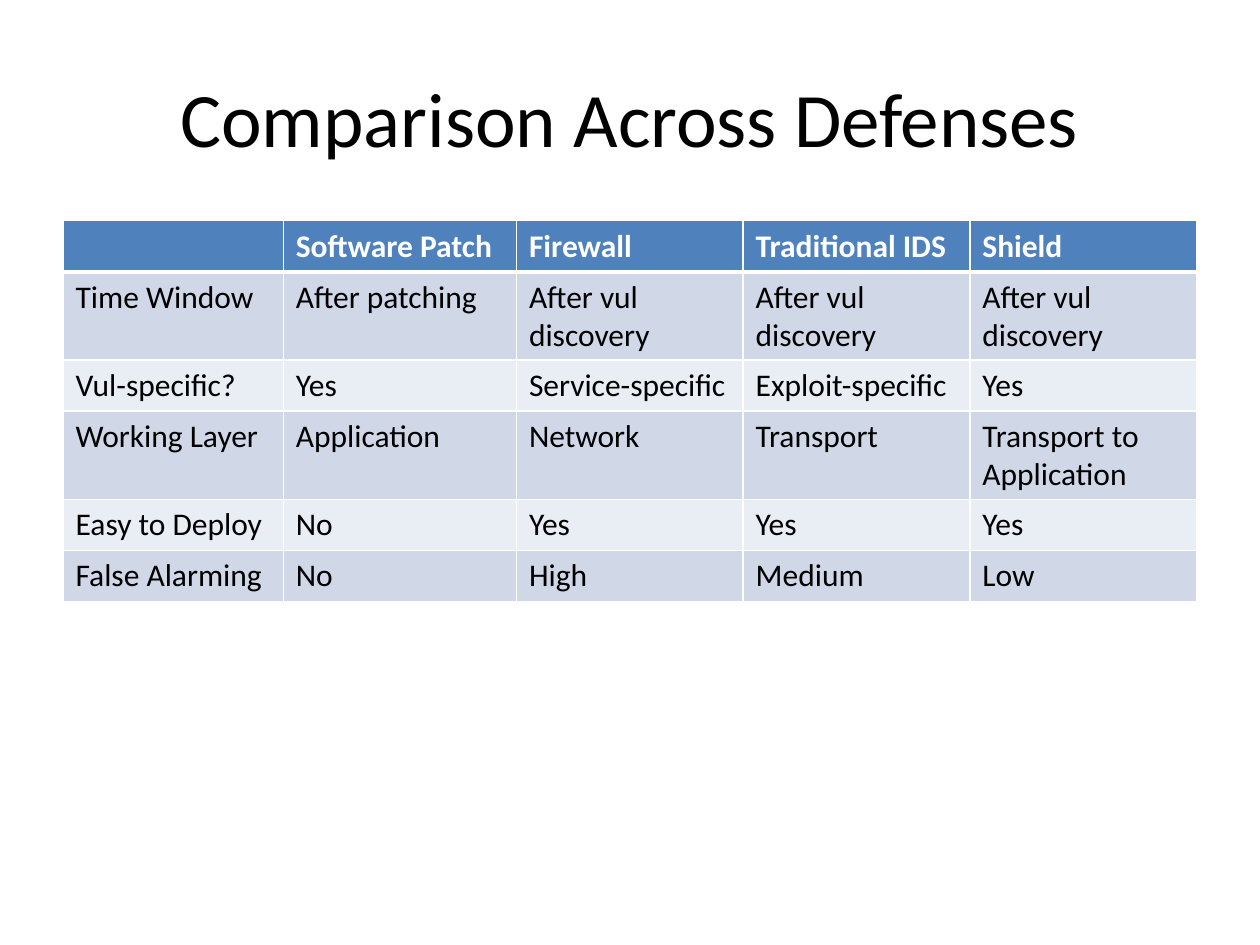
"""Build a slide that compares network defenses in a table."""
from lxml import etree
from pptx import Presentation
from pptx.dml.color import RGBColor
from pptx.enum.text import MSO_ANCHOR, PP_ALIGN
from pptx.oxml.ns import qn
from pptx.util import Cm, Pt

MIDDLE = MSO_ANCHOR.MIDDLE
CENTER = PP_ALIGN.CENTER
FONT = "Calibri"
BLACK, WHITE = "000000", "FFFFFF"
HEADER_FILL = "4F81BD"
BAND_FILLS = ("E9EDF4", "D0D8E8")
LEFT, WIDTH = 1.27, 22.86
COLUMN_WIDTHS = (4.44, 4.7, 4.57, 4.57, 4.57)
ROW_HEIGHT = 1.03
ROWS = (
    ("", "Software Patch", "Firewall", "Traditional IDS", "Shield"),
    ("Time Window", "After patching", "After vul discovery",
     "After vul discovery", "After vul discovery"),
    ("Vul-specific?", "Yes", "Service-specific", "Exploit-specific", "Yes"),
    ("Working Layer", "Application", "Network", "Transport",
     "Transport to Application"),
    ("Easy to Deploy", "No", "Yes", "Yes", "Yes"),
    ("False Alarming", "No", "High", "Medium", "Low"),
)


def color(value):
    """Turn a hex string into a colour."""
    return RGBColor.from_string(value)


def write(frame, text, size, ink, bold=False):
    """Set the text of a frame and format its runs."""
    frame.text = text
    for para in frame.paragraphs:
        for span in para.runs:
            span.font.name = FONT
            span.font.size = Pt(size)
            span.font.bold = bold
            span.font.color.rgb = color(ink)


def add_title(page, text):
    """Add the centred title."""
    box = page.shapes.add_textbox(Cm(LEFT), Cm(0.76), Cm(WIDTH), Cm(3.18))
    frame = box.text_frame
    frame.word_wrap = True
    frame.vertical_anchor = MIDDLE
    write(frame, text, 44, BLACK)
    frame.paragraphs[0].alignment = CENTER


def add_border(cell, side, width):
    """Draw a white line along one side of a cell."""
    properties = cell._tc.get_or_add_tcPr()
    line = etree.SubElement(properties, qn(f"a:ln{side}"), w=str(Pt(width)))
    fill = etree.SubElement(line, qn("a:solidFill"))
    etree.SubElement(fill, qn("a:srgbClr"), val=WHITE)


def format_cell(cell, text, row):
    """Fill one cell according to its row."""
    header = row == 0
    widths = {"L": 1, "R": 1, "T": 3 if row == 1 else 1, "B": 3 if header else 1}
    for side, width in widths.items():
        add_border(cell, side, width)
    cell.fill.solid()
    cell.fill.fore_color.rgb = color(HEADER_FILL if header else BAND_FILLS[row % 2])
    write(cell.text_frame, text, 18, WHITE if header else BLACK, header)


def add_comparison(page):
    """Add the table of defenses."""
    table = page.shapes.add_table(
        len(ROWS), len(COLUMN_WIDTHS), Cm(LEFT), Cm(4.45),
        Cm(WIDTH), Cm(ROW_HEIGHT * len(ROWS))).table
    for column, width in zip(table.columns, COLUMN_WIDTHS):
        column.width = Cm(width)
    for index, (row, texts) in enumerate(zip(table.rows, ROWS)):
        row.height = Cm(ROW_HEIGHT)
        for cell, text in zip(row.cells, texts):
            format_cell(cell, text, index)


def main():
    """Build and save the deck."""
    deck = Presentation()
    deck.slide_width, deck.slide_height = Cm(25.4), Cm(19.05)
    page = deck.slides.add_slide(deck.slide_layouts[6])
    add_title(page, "Comparison Across Defenses")
    add_comparison(page)
    deck.save("out.pptx")


if __name__ == "__main__":
    main()
